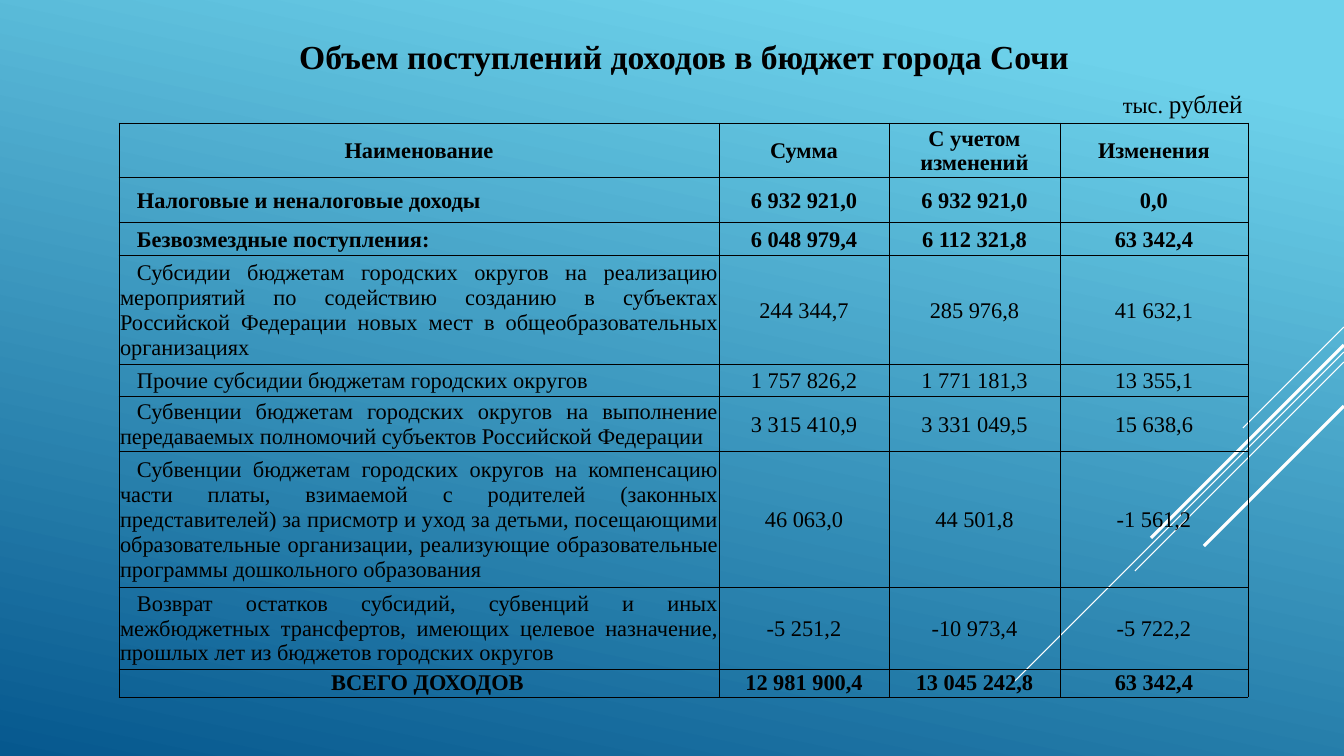
from lxml import etree
from pptx import Presentation
from pptx.dml.color import RGBColor
from pptx.enum.shapes import MSO_CONNECTOR
from pptx.enum.text import MSO_ANCHOR, PP_ALIGN
from pptx.oxml.ns import qn
from pptx.util import Pt

EMU_PER_PX = 914400 / 100.8
SLIDE_W, SLIDE_H = 1344, 756
FONT = "Times New Roman"
BLACK, WHITE = "000000", "FFFFFF"
INDENT = 17

COL_WIDTHS = [600, 170, 171, 188]
# Row height, bold, name, amounts
ROWS = [
    (54, True, "Наименование", "Сумма", "С учетом изменений", "Изменения"),
    (45, True, "Налоговые и неналоговые доходы", "6 932 921,0", "6 932 921,0", "0,0"),
    (33, True, "Безвозмездные поступления:", "6 048 979,4", "6 112 321,8", "63 342,4"),
    (109, False, "Субсидии бюджетам городских округов на реализацию мероприятий "
     "по содействию созданию в субъектах Российской Федерации новых мест "
     "в общеобразовательных организациях", "244 344,7", "285 976,8", "41 632,1"),
    (32, False, "Прочие субсидии бюджетам городских округов",
     "1 757 826,2", "1 771 181,3", "13 355,1"),
    (55, False, "Субвенции бюджетам городских округов на выполнение "
     "передаваемых полномочий субъектов Российской Федерации",
     "3 315 410,9", "3 331 049,5", "15 638,6"),
    (135, False, "Субвенции бюджетам городских округов на компенсацию части платы, "
     "взимаемой с родителей (законных представителей) за присмотр и уход за детьми, "
     "посещающими образовательные организации, реализующие образовательные "
     "программы дошкольного образования", "46 063,0", "44 501,8", "-1 561,2"),
    (82, False, "Возврат остатков субсидий, субвенций и иных межбюджетных "
     "трансфертов, имеющих целевое назначение, прошлых лет из бюджетов "
     "городских округов", "-5 251,2", "-10 973,4", "-5 722,2"),
    (27, True, "ВСЕГО ДОХОДОВ", "12 981 900,4", "13 045 242,8", "63 342,4"),
]
# Height at the right edge, length along each axis, line width
RAYS = [(327, 101, 0.75), (352, 329, 0.75), (362, 209, 0.75),
        (345, 193, 2.25), (406, 140, 2.25)]


def px(n):
    return round(n * EMU_PER_PX)


def rgb(color):
    return RGBColor.from_string(color)


def set_font(font, size, bold=False):
    font.name = FONT
    font.size = Pt(size)
    font.bold = bold
    font.color.rgb = rgb(BLACK)


def add_background(s):
    fill = s.background.fill
    fill.gradient()
    fill.gradient_angle = 258
    for stop, position, color in zip(fill.gradient_stops, (0.1, 1), ("6ED2EB", "06588E")):
        stop.position = position
        stop.color.rgb = rgb(color)


def add_rays(s, right):
    for y, length, width in RAYS:
        ray = s.shapes.add_connector(MSO_CONNECTOR.STRAIGHT, px(right), px(y),
                                     px(right - length), px(y + length))
        ray.line.color.rgb = rgb(WHITE)
        ray.line.width = Pt(width)
        etree.SubElement(ray._element.spPr, qn("a:effectLst"))


def add_title(s, x, y, w, h):
    title = s.shapes.title
    title.left, title.top, title.width, title.height = px(x), px(y), px(w), px(h)
    tf = title.text_frame
    tf.text = "Объем поступлений доходов в бюджет города Сочи"
    tf.vertical_anchor = MSO_ANCHOR.MIDDLE
    p = tf.paragraphs[0]
    p.alignment = PP_ALIGN.CENTER
    set_font(p.font, 24, True)


def add_unit(s, x, y, w, h):
    tf = s.shapes.add_textbox(px(x), px(y), px(w), px(h)).text_frame
    tf.word_wrap = True
    for text, size in (("тыс. ", 16), ("рублей", 18)):
        r = tf.paragraphs[0].add_run()
        r.text = text
        set_font(r.font, size)


def add_borders(cell):
    tcPr = cell._tc.get_or_add_tcPr()
    for i, side in enumerate(("lnL", "lnR", "lnT", "lnB")):
        ln = etree.Element(qn(f"a:{side}"), w=str(Pt(0.5)))
        fill = etree.SubElement(ln, qn("a:solidFill"))
        etree.SubElement(fill, qn("a:srgbClr"), val=BLACK)
        tcPr.insert(i, ln)


def fill_cell(cell, text, bold, align, indent):
    cell.text = text
    cell.fill.background()
    cell.vertical_anchor = MSO_ANCHOR.MIDDLE
    cell.margin_left = cell.margin_right = cell.margin_top = px(1)
    cell.margin_bottom = 0
    p = cell.text_frame.paragraphs[0]
    p.alignment = align
    set_font(p.font, 16, bold)
    if indent:
        p._p.get_or_add_pPr().set("indent", str(px(indent)))
    add_borders(cell)


def add_income_table(s, x, y):
    heights = [row[0] for row in ROWS]
    table = s.shapes.add_table(len(ROWS), len(COL_WIDTHS), px(x), px(y),
                               px(sum(COL_WIDTHS)), px(sum(heights))).table
    table.first_row = table.horz_banding = False
    for column, width in zip(table.columns, COL_WIDTHS):
        column.width = px(width)
    last = len(ROWS) - 1
    for i, (height, bold, *texts) in enumerate(ROWS):
        table.rows[i].height = px(height)
        for j, text in enumerate(texts):
            justified = j == 0 and 0 < i < last
            align = PP_ALIGN.JUSTIFY if justified else PP_ALIGN.CENTER
            fill_cell(table.cell(i, j), text, bold, align, INDENT if j == 0 and i else 0)


def main():
    prs = Presentation()
    prs.slide_width, prs.slide_height = px(SLIDE_W), px(SLIDE_H)
    s = prs.slides.add_slide(prs.slide_layouts[5])
    # Backdrop
    add_background(s)
    add_rays(s, SLIDE_W)
    # Heading and unit
    add_title(s, 119, 31, 1130, 50)
    add_unit(s, 1113, 83, 152, 40)
    # Income table
    add_income_table(s, 119, 123)
    prs.save("out.pptx")


if __name__ == "__main__":
    main()
